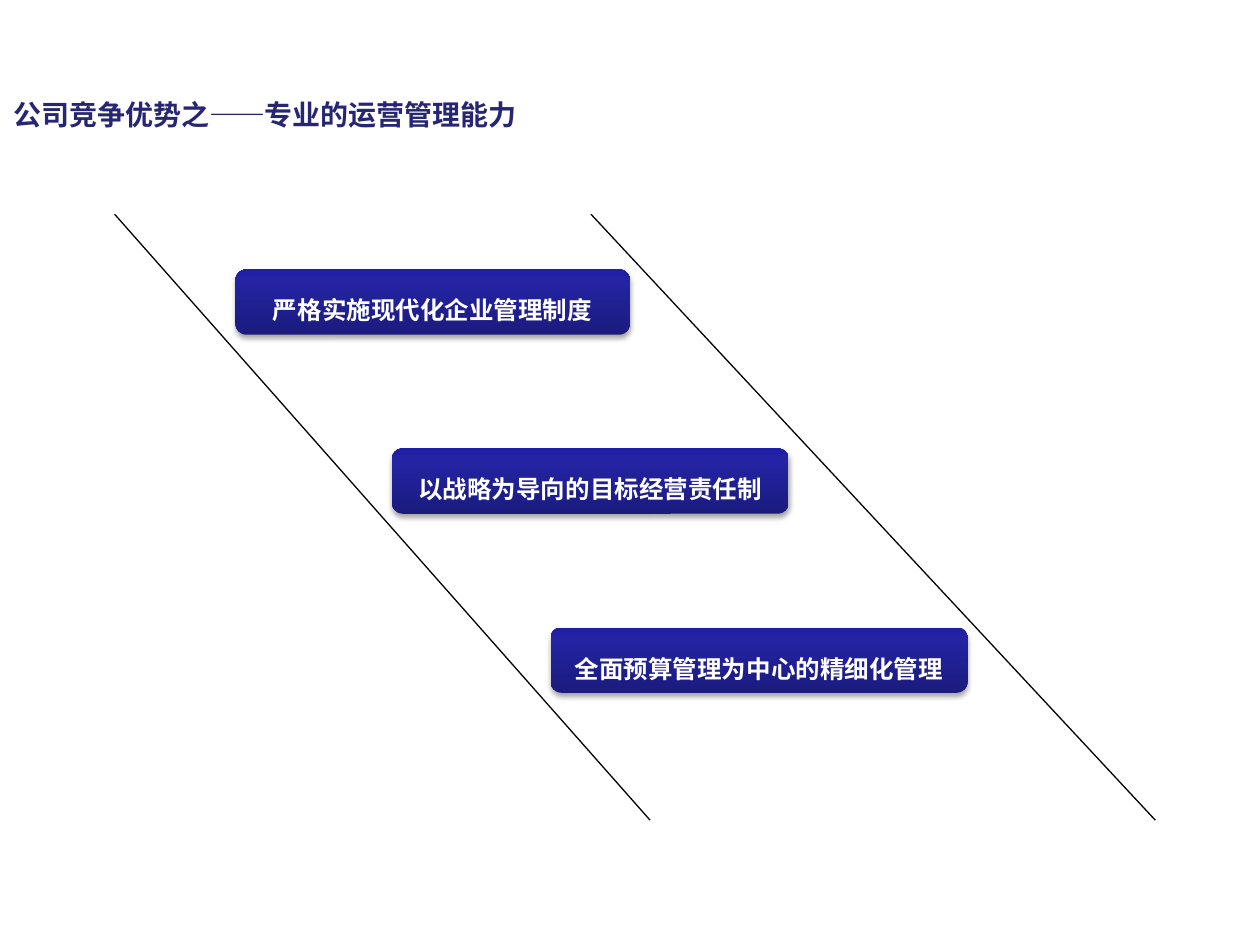
from copy import deepcopy

from lxml.etree import SubElement
from pptx import Presentation
from pptx.dml.color import RGBColor
from pptx.enum.shapes import MSO_CONNECTOR as Connector, MSO_SHAPE as Preset
from pptx.enum.text import MSO_ANCHOR as Anchor, MSO_AUTO_SIZE as AutoSize, PP_ALIGN as Align
from pptx.oxml.ns import qn
from pptx.util import Pt

FONT = "Noto Sans CJK SC"
GRADIENT = [(0, "1B1B7E"), (0.8, "2323A3"), (1, "2020A6")]
BOX_TOP, BOX_STEP, BOX_HEIGHT = 154, 102.3, 37.3
BOXES = [
    ("严格实施现代化企业管理制度", 134.6, 225.4),
    ("以战略为导向的目标经营责任制", 223.9, 226.8),
    ("全面预算管理为中心的精细化管理", 314.6, 238.3),
]
LINE_TOP, LINE_BOTTOM = 122.4, 468.7
LINES = [(65.5, 371.5), (337.7, 660.2)]


def color(value):
    """Turn a hex string into a colour."""
    return RGBColor.from_string(value)


def write_text(shape, text, size, fill, align=Align.LEFT, spacing=1.0):
    """Put one formatted bold paragraph in the shape."""
    frame = shape.text_frame
    frame.word_wrap = True
    frame.auto_size = AutoSize.NONE
    frame.vertical_anchor = Anchor.MIDDLE
    paragraph = frame.paragraphs[0]
    paragraph.alignment = align
    paragraph.line_spacing = spacing
    paragraph.space_before = Pt(0)
    run = paragraph.add_run()
    run.text = text
    run.font.size = Pt(size)
    run.font.bold = True
    run.font.color.rgb = color(fill)
    run.font.name = FONT
    SubElement(run.font._element, qn("a:ea"), typeface=FONT)


def fill_gradient(shape):
    """Fill the shape with the vertical three-stop gradient."""
    shape.fill.gradient()
    shape.fill.gradient_angle = 90
    stop_list = shape._element.spPr.find(qn("a:gradFill")).find(qn("a:gsLst"))
    stop_list.append(deepcopy(stop_list[0]))
    for stop, (position, value) in zip(shape.fill.gradient_stops, GRADIENT):
        stop.position = position
        stop.color.rgb = color(value)


def add_shadow(shape):
    """Give the shape a soft shadow below it."""
    shape.shadow.inherit = False
    effects = shape._element.spPr.find(qn("a:effectLst"))
    shadow = SubElement(effects, qn("a:outerShdw"), blurRad=str(Pt(3.1)),
                        dist=str(Pt(1.8)), dir="5400000", rotWithShape="0")
    black = SubElement(shadow, qn("a:srgbClr"), val="000000")
    SubElement(black, qn("a:alpha"), val="35000")


def add_box(slide, text, left, top, width):
    """Add a rounded box with a gradient, a shadow and a label."""
    shape = slide.shapes.add_shape(Preset.ROUNDED_RECTANGLE, Pt(left), Pt(top),
                                   Pt(width), Pt(BOX_HEIGHT))
    fill_gradient(shape)
    shape.line.fill.background()
    add_shadow(shape)
    write_text(shape, text, 14, "FFFFFF", align=Align.CENTER, spacing=1.55)


def add_line(slide, start, end):
    """Add a thin black slanted line."""
    line = slide.shapes.add_connector(Connector.STRAIGHT, Pt(start), Pt(LINE_TOP),
                                      Pt(end), Pt(LINE_BOTTOM))
    line.line.color.rgb = color("000000")
    line.line.width = Pt(0.75)
    SubElement(line._element.spPr, qn("a:effectLst"))


def add_title(slide, text):
    """Place and format the slide title."""
    title = slide.shapes.title
    title.left, title.top, title.width, title.height = Pt(0.7), Pt(51.8), Pt(619.2), Pt(26.6)
    write_text(title, text, 16, "262673")


def main():
    """Build and save the presentation."""
    presentation = Presentation()
    presentation.slide_width, presentation.slide_height = Pt(720), Pt(540)
    slide = presentation.slides.add_slide(presentation.slide_layouts[5])
    add_title(slide, "公司竞争优势之——专业的运营管理能力")
    for index, (text, left, width) in enumerate(BOXES):
        add_box(slide, text, left, BOX_TOP + index * BOX_STEP, width)
    for start, end in LINES:
        add_line(slide, start, end)
    presentation.save("out.pptx")


if __name__ == "__main__":
    main()
